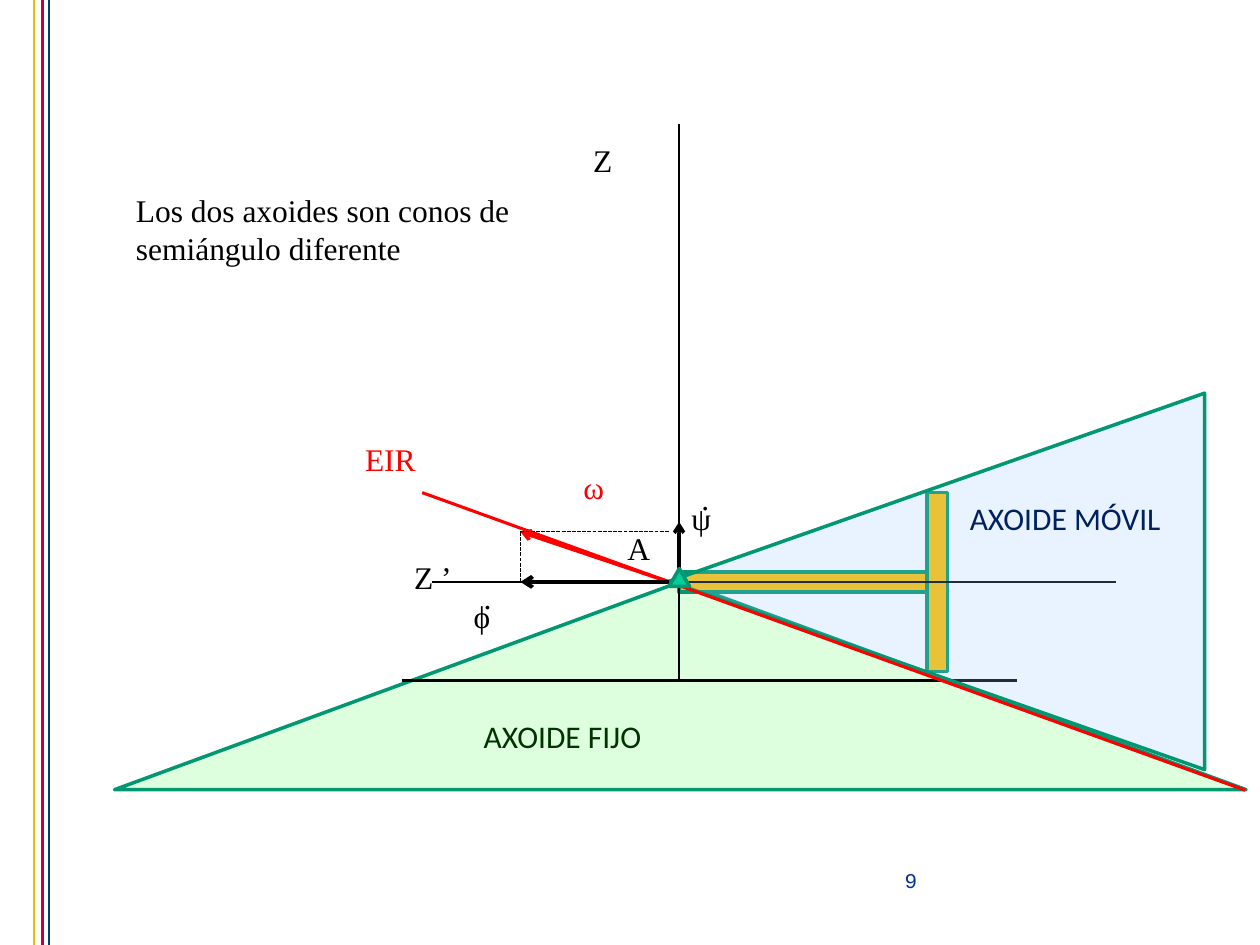
"""Build the slide showing the fixed and moving axodes as two cones."""
from typing import NamedTuple, Optional

from lxml import etree
from pptx import Presentation
from pptx.dml.color import RGBColor
from pptx.enum.dml import MSO_LINE
from pptx.enum.shapes import MSO_CONNECTOR, MSO_SHAPE
from pptx.enum.text import PP_ALIGN
from pptx.oxml.ns import qn
from pptx.util import Cm, Pt

STRAIGHT = MSO_CONNECTOR.STRAIGHT
TRIANGLE = MSO_SHAPE.ISOSCELES_TRIANGLE
RECTANGLE = MSO_SHAPE.RECTANGLE
DASH = MSO_LINE.SQUARE_DOT
LEFT, CENTER = PP_ALIGN.LEFT, PP_ALIGN.CENTER

SLIDE_WIDTH, SLIDE_HEIGHT = 25.4, 19.05
BLACK, RED, TEAL, GOLD = "000000", "FF0000", "009771", "FFC000"
SERIF, SANS, MONO = "Times New Roman", "Calibri", "Courier New"

AXIS_X, AXIS_Y = 13.69, 11.73
GROUND_Y = 13.72
VECTOR_START, VECTOR_END = 13.49, 10.49
OMEGA_Y = 10.72


class Line(NamedTuple):
    x1: float
    y1: float
    x2: float
    y2: float
    color: str = BLACK
    width: float = 1.5
    arrow: bool = False
    dashed: bool = False


class Solid(NamedTuple):
    kind: int
    left: float
    top: float
    width: float
    height: float
    fill: str
    opacity: int = 100
    rotation: int = 0


class Label(NamedTuple):
    text: str
    left: float
    top: float
    width: float
    height: float = 1.02
    color: str = BLACK
    font: str = SERIF
    size: int = 18
    align: int = LEFT


STRIPES = [
    Line(x, 0, x, SLIDE_HEIGHT, color)
    for x, color in ((0.69, "EBBD00"), (0.86, "C1003D"), (0.99, "003F6D"))
]

DRAWING = STRIPES + [
    Solid(TRIANGLE, 2.31, AXIS_Y, 22.81, 4.19, "99FF99", 33),
    Solid(RECTANGLE, AXIS_X, 11.53, 5.21, 0.41, GOLD),
    Solid(RECTANGLE, 18.69, 9.93, 0.41, 3.61, GOLD),
    Line(8.71, AXIS_Y, 22.5, AXIS_Y),
    Line(8.1, GROUND_Y, 20.5, GROUND_Y),
    Solid(TRIANGLE, 15.09, 6.32, 7.59, 10.8, "99CCFF", 22, 270),
    Line(AXIS_X, 2.51, AXIS_X, GROUND_Y),
    Line(8.51, 9.93, 25.1, 15.93, RED, 1.75),
    Line(VECTOR_START, AXIS_Y, VECTOR_END, OMEGA_Y, RED, 2, arrow=True),
    Line(AXIS_X, 11.53, AXIS_X, 10.52, width=2, arrow=True),
    Line(VECTOR_START, AXIS_Y, VECTOR_END, AXIS_Y, width=2.25, arrow=True),
    Line(VECTOR_END, OMEGA_Y, VECTOR_START, OMEGA_Y, width=0.75, dashed=True),
    Line(VECTOR_END, OMEGA_Y, VECTOR_END, AXIS_Y, width=0.75, dashed=True),
    Solid(TRIANGLE, VECTOR_START, 11.46, 0.41, 0.36, "00CC99"),
]

LABELS = [
    Label("Los dos axoides son conos de semiángulo diferente", 2.49, 3.73, 8.79, 1.8),
    Label("Z", 11.71, 2.72, 2.59),
    Label("Z ’", 8.1, 11.13, 2.59),
    Label("AXOIDE FIJO", 9.5, 14.33, 4.19, color="003300", font=SANS),
    Label("AXOIDE MÓVIL", 19.3, 9.93, 4.95, color="002060", font=SANS),
    Label("EIR", 7.11, 8.74, 3.61, color=RED),
    Label("ω", 11.51, 9.32, 1.4, color=RED),
    Label("ψ", 13.69, 9.93, 2.39),
    Label(".", 13.89, 9.53, 1.4),
    Label("ϕ", 9.3, 11.91, 1.4),
    Label(".", 9.5, 11.53, 1.4),
    Label("A", 12.4, 10.54, 2.21),
    Label("9", 17.63, 17.37, 1.47, 0.69, "003399", MONO, 12, CENTER),
]


def rgb(color: str) -> RGBColor:
    """Turn a hex string into a colour."""
    return RGBColor.from_string(color)


def draw_line(slide, line: Line) -> None:
    """Draw a straight connector with optional dash and arrowhead."""
    connector = slide.shapes.add_connector(
        STRAIGHT, Cm(line.x1), Cm(line.y1), Cm(line.x2), Cm(line.y2)
    )
    connector.line.color.rgb = rgb(line.color)
    connector.line.width = Pt(line.width)
    if line.dashed:
        connector.line.dash_style = DASH
    if line.arrow:
        outline = connector.line._get_or_add_ln()
        etree.SubElement(outline, qn("a:tailEnd"), type="arrow")
    etree.SubElement(connector._element.spPr, qn("a:effectLst"))


def draw_solid(slide, solid: Solid) -> None:
    """Draw a filled and outlined preset shape."""
    shape = slide.shapes.add_shape(
        solid.kind, Cm(solid.left), Cm(solid.top), Cm(solid.width), Cm(solid.height)
    )
    shape.shadow.inherit = False
    shape.rotation = solid.rotation
    shape.fill.solid()
    shape.fill.fore_color.rgb = rgb(solid.fill)
    shape.line.color.rgb = rgb(TEAL)
    shape.line.width = Pt(2)
    if solid.opacity < 100:
        color = shape._element.spPr.find(qn("a:solidFill"))[0]
        etree.SubElement(color, qn("a:alpha"), val=str(solid.opacity * 1000))


def draw_label(slide, label: Label) -> None:
    """Write a wrapped text box in one style."""
    box = slide.shapes.add_textbox(
        Cm(label.left), Cm(label.top), Cm(label.width), Cm(label.height)
    )
    box.text_frame.word_wrap = True
    box.text_frame.text = label.text
    paragraph = box.text_frame.paragraphs[0]
    paragraph.alignment = label.align
    font = paragraph.runs[0].font
    font.name = label.font
    font.size = Pt(label.size)
    font.color.rgb = rgb(label.color)


def main() -> None:
    """Build and save the presentation."""
    presentation = Presentation()
    presentation.slide_width = Cm(SLIDE_WIDTH)
    presentation.slide_height = Cm(SLIDE_HEIGHT)
    slide = presentation.slides.add_slide(presentation.slide_layouts[6])
    for item in DRAWING:
        if isinstance(item, Line):
            draw_line(slide, item)
        else:
            draw_solid(slide, item)
    for label in LABELS:
        draw_label(slide, label)
    presentation.save("out.pptx")


if __name__ == "__main__":
    main()
